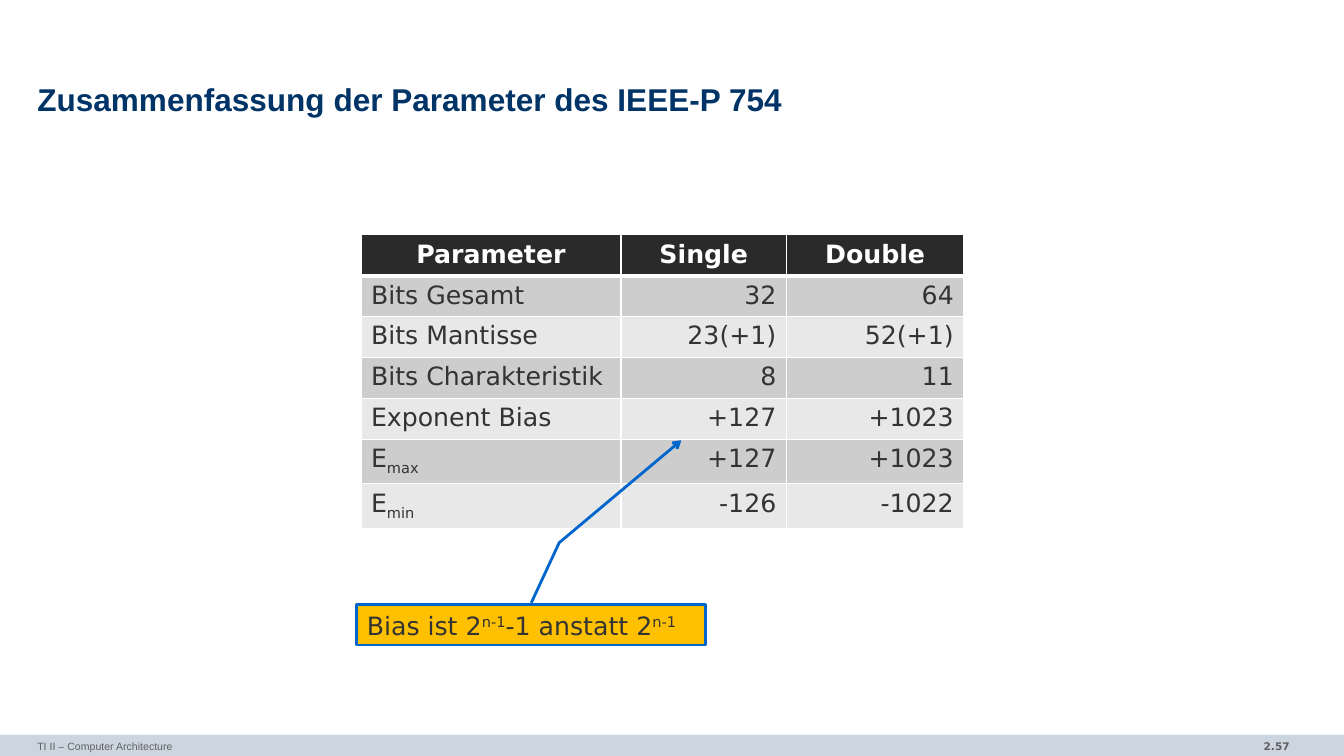
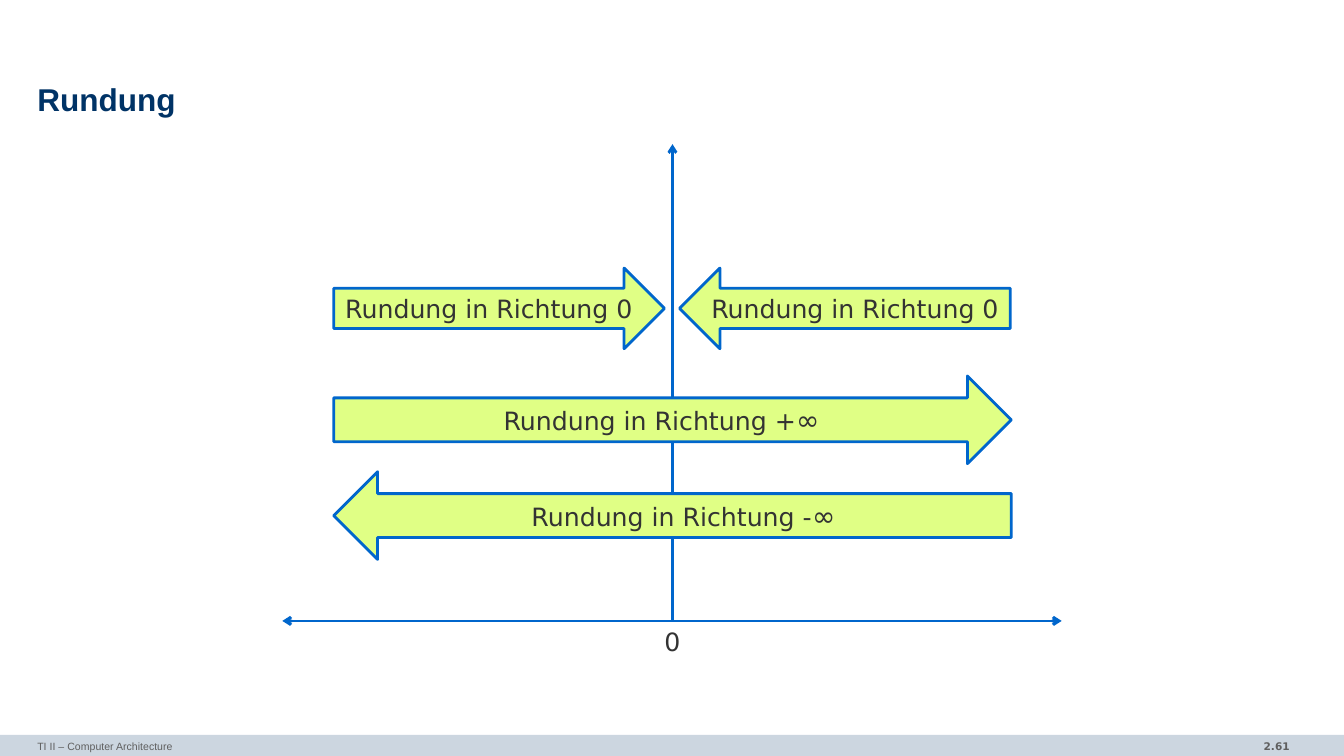
"""Build two lecture slides on IEEE-P 754 parameters and rounding modes."""
import pptx
import pptx.dml.color
import pptx.enum.shapes
import pptx.enum.text
import pptx.oxml
import pptx.oxml.ns
import pptx.util

Inches = pptx.util.Inches
Pt = pptx.util.Pt
RGBColor = pptx.dml.color.RGBColor
SHAPE = pptx.enum.shapes.MSO_SHAPE
STRAIGHT = pptx.enum.shapes.MSO_CONNECTOR.STRAIGHT
ALIGN = pptx.enum.text.PP_ALIGN
ANCHOR = pptx.enum.text.MSO_ANCHOR

NAVY = RGBColor(0x00, 0x33, 0x66)
BLUE = RGBColor(0x00, 0x66, 0xCC)
BAND = RGBColor(0xCC, 0xD6, 0xE0)
GREY = RGBColor(0x5F, 0x5F, 0x5F)
INK = RGBColor(0x33, 0x33, 0x33)
WHITE = RGBColor(0xFF, 0xFF, 0xFF)
HEADER = RGBColor(0x2A, 0x2A, 0x2A)
ROW_DARK = RGBColor(0xCD, 0xCD, 0xCD)
ROW_LIGHT = RGBColor(0xE8, 0xE8, 0xE8)
ORANGE = RGBColor(0xFF, 0xC0, 0x00)
LIME = RGBColor(0xE0, 0xFF, 0x85)


def write(tf, text, size=18, font="DejaVu Sans", color=INK, bold=False,
          align=ALIGN.LEFT, anchor=ANCHOR.TOP, wrap=True, margins=None, spacing=None):
    """Fill a text frame with a string or a list of (text, size, baseline) runs."""
    tf.word_wrap = wrap
    tf.vertical_anchor = anchor
    if margins:
        tf.margin_left, tf.margin_top, tf.margin_right, tf.margin_bottom = map(Inches, margins)
    p = tf.paragraphs[0]
    p.alignment = align
    if spacing:
        p.line_spacing = spacing
    for run_text, run_size, baseline in [(text, size, 0)] if isinstance(text, str) else text:
        r = p.add_run()
        r.text = run_text
        r.font.size = Pt(run_size)
        r.font.name = font
        r.font.bold = bold
        r.font.color.rgb = color
        if baseline:
            r.font._element.set("baseline", str(baseline * 1000))


def outline(sp, ends=()):
    """Draw the blue line of a shape or connector, with arrowheads at the given ends."""
    sp.line.color.rgb = BLUE
    sp.line.width = Pt(2)
    for end in ends:
        pptx.oxml.ns.qn("a:ln")
        ln = sp.line._get_or_add_ln()
        ln.append(pptx.oxml.parse_xml(
            f'<a:{end} {pptx.oxml.ns.nsdecls("a")} type="arrow"/>'))


prs = pptx.Presentation()
prs.slide_width = Inches(13.33)
prs.slide_height = Inches(7.5)

for title, number in [("Zusammenfassung der Parameter des IEEE-P 754", "2.57"),
                      ("Rundung", "2.61")]:
    s = prs.slides.add_slide(prs.slide_layouts[6])
    sp = s.shapes.add_shape(SHAPE.RECTANGLE, 0, Inches(7.29), prs.slide_width, Inches(0.21))
    sp.shadow.inherit = False
    sp.fill.solid()
    sp.fill.fore_color.rgb = BAND
    sp.line.fill.background()
    sp = s.shapes.add_textbox(Inches(11.1), Inches(7.29), Inches(1.79), Inches(0.22))
    write(sp.text_frame, number, size=7.5, color=GREY, bold=True, align=ALIGN.RIGHT)
    sp = s.shapes.add_textbox(Inches(0.37), Inches(0.78), Inches(12.6), Inches(0.47))
    write(sp.text_frame, title, size=22.5, font="Arial", color=NAVY, bold=True,
          anchor=ANCHOR.MIDDLE, margins=(0, 0, 0, 0), spacing=0.85)
    sp = s.shapes.add_textbox(Inches(0.37), Inches(7.29), Inches(8.72), Inches(0.21))
    write(sp.text_frame, "TI II – Computer Architecture", size=7.5, font="Arial",
          color=GREY, margins=(0, 0.05, 0, 0.05))

s_parameters, s_rounding = prs.slides

rows = [
    ("Parameter", "Single", "Double"),
    ("Bits Gesamt", "32", "64"),
    ("Bits Mantisse", "23(+1)", "52(+1)"),
    ("Bits Charakteristik", "8", "11"),
    ("Exponent Bias", "+127", "+1023"),
    ([("E", 18, 0), ("max", 18, -25)], "+127", "+1023"),
    ([("E", 18, 0), ("min", 18, -25)], "-126", "-1022"),
]
widths = (2.58, 1.64, 1.76)
table = s_parameters.shapes.add_table(len(rows), len(widths), Inches(3.58), Inches(2.33),
                                      Inches(sum(widths)), Inches(2.84)).table
for column, width in zip(table.columns, widths):
    column.width = Inches(width)
for i, row in enumerate(rows):
    for j, text in enumerate(row):
        cell = table.cell(i, j)
        if i == 0:
            fill, color, align = HEADER, WHITE, ALIGN.CENTER
        else:
            fill, color = ROW_DARK if i % 2 else ROW_LIGHT, INK
            align = ALIGN.RIGHT if j else ALIGN.LEFT
        write(cell.text_frame, text, color=color, bold=i == 0, align=align)
        tc_pr = cell._tc.get_or_add_tcPr()
        for side in ("lnL", "lnR", "lnT", "lnB"):
            thick = (i, side) in ((0, "lnB"), (1, "lnT"))
            tc_pr.append(pptx.oxml.parse_xml(
                f'<a:{side} {pptx.oxml.ns.nsdecls("a")} w="{Pt(3 if thick else 1)}">'
                f'<a:solidFill><a:srgbClr val="{WHITE}"/></a:solidFill></a:{side}>'))
        cell.fill.solid()
        cell.fill.fore_color.rgb = fill

sp = s_parameters.shapes.add_shape(SHAPE.LINE_CALLOUT_2, Inches(3.54), Inches(6),
                                   Inches(3.46), Inches(0.4))
for i, value in enumerate((-0.05, 0.5, -1.54, 0.58, -4.08, 0.93)):
    sp.adjustments[i] = value
sp.shadow.inherit = False
sp.fill.solid()
sp.fill.fore_color.rgb = ORANGE
outline(sp, ["tailEnd"])
write(sp.text_frame, [("Bias ist 2", 18, 0), ("n-1", 18, 30),
                      ("-1 anstatt 2", 18, 0), ("n-1", 18, 30)], anchor=ANCHOR.MIDDLE)

for x1, y1, x2, y2, ends in [(2.8, 6.16, 10.53, 6.16, ["headEnd", "tailEnd"]),
                             (6.67, 6.15, 6.67, 1.43, ["tailEnd"])]:
    sp = s_rounding.shapes.add_connector(STRAIGHT, Inches(x1), Inches(y1),
                                         Inches(x2), Inches(y2))
    outline(sp, ends)
    sp._element.spPr.append(pptx.oxml.parse_xml(
        f'<a:effectLst {pptx.oxml.ns.nsdecls("a")}/>'))

sp = s_rounding.shapes.add_textbox(Inches(6.49), Inches(6.16), Inches(0.36), Inches(0.4))
write(sp.text_frame, "0", align=ALIGN.CENTER, wrap=False)

for shape, x, y, w, h, text in [
    (SHAPE.RIGHT_ARROW, 3.31, 2.66, 3.28, 0.8, "Rundung in Richtung 0"),
    (SHAPE.LEFT_ARROW, 6.74, 2.66, 3.28, 0.8, "Rundung in Richtung 0"),
    (SHAPE.RIGHT_ARROW, 3.31, 3.73, 6.72, 0.87,
     [("Rundung in Richtung +", 18, 0), ("∞", 20, 0)]),
    (SHAPE.LEFT_ARROW, 3.31, 4.68, 6.72, 0.87,
     [("Rundung in Richtung -", 18, 0), ("∞", 20, 0)]),
]:
    sp = s_rounding.shapes.add_shape(shape, Inches(x), Inches(y), Inches(w), Inches(h))
    sp.shadow.inherit = False
    sp.fill.solid()
    sp.fill.fore_color.rgb = LIME
    outline(sp)
    write(sp.text_frame, text, align=ALIGN.CENTER, anchor=ANCHOR.MIDDLE, wrap=False)

prs.save("out.pptx")
